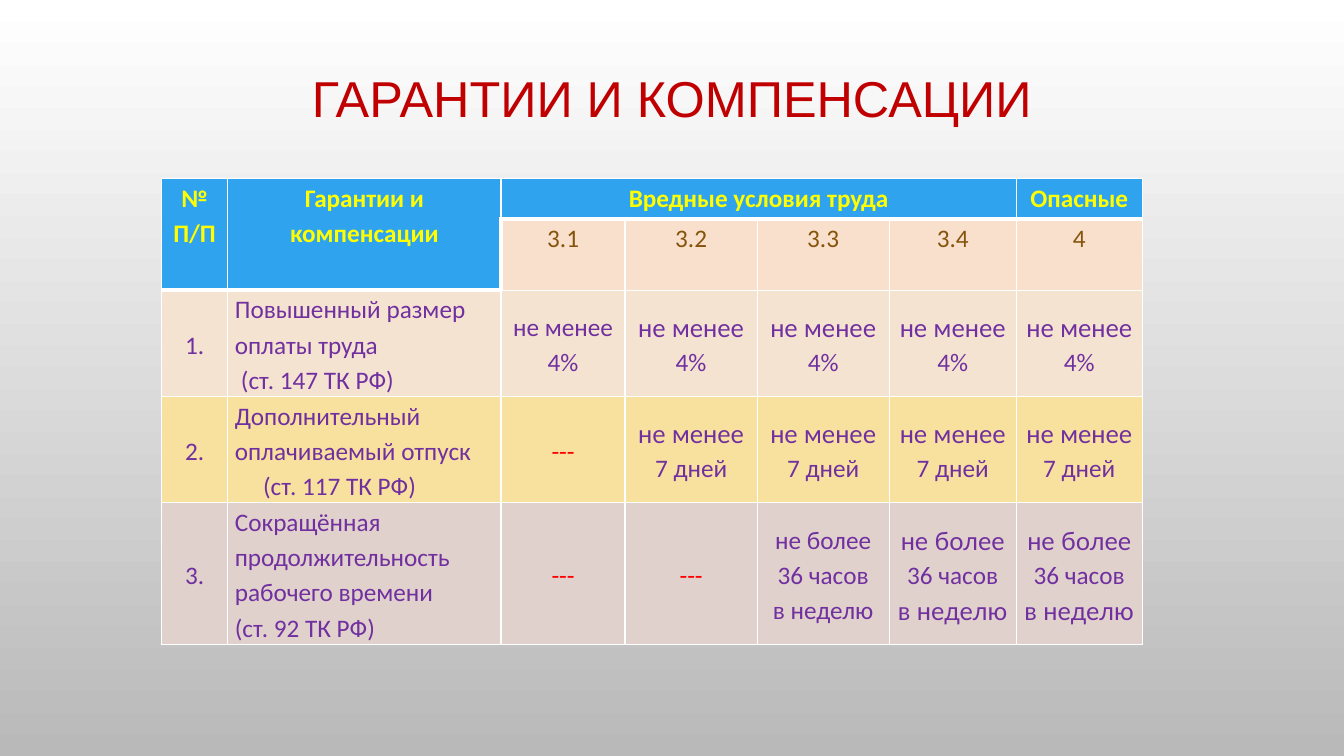
from pptx import Presentation
from pptx.dml.color import RGBColor
from pptx.enum.text import MSO_ANCHOR, MSO_AUTO_SIZE, PP_ALIGN
from pptx.oxml import parse_xml
from pptx.oxml.ns import nsdecls
from pptx.util import Inches, Pt

BODY, ACCENT, TITLE = "Calibri", "Lato", "Arial"
PURPLE, RED, YELLOW, BROWN, WHITE = "7030A0", "FF0000", "FFFF00", "85540A", "FFFFFF"
HEADER_FILL, CLASS_FILL = "2FA3EE", "F9E0CD"
ROW_FILLS = ["F5E3D1", "F8E19F", "E1D1CC"]
COLUMN_WIDTHS = [0.66, 2.71, 1.23, 1.31, 1.31, 1.26, 1.25]
ROW_HEIGHTS = [0.4, 0.71, 1.05, 1.05, 1.41]
DASH = "---"


def color(value):
    return RGBColor.from_string(value)


def accented(phrase, value):
    """Paragraph with the phrase in the accent font and the value in the body font."""
    return [(phrase + " ", ACCENT), (value, BODY)]


class GuaranteesSlide:
    def __init__(self, presentation):
        self.slide = presentation.slides.add_slide(presentation.slide_layouts[5])
        self.format = {"size": Pt(18), "name": BODY, "bold": False}

    def background(self, top, bottom):
        fill = self.slide.background.fill
        fill.gradient()
        fill.gradient_angle = 270
        for stop, value in zip(fill.gradient_stops, (top, bottom)):
            stop.color.rgb = color(value)

    def run(self, paragraph, text, text_color, **changes):
        run = paragraph.add_run()
        run.text = text
        for name, value in {**self.format, **changes}.items():
            setattr(run.font, name, value)
        run.font.color.rgb = color(text_color)

    def title(self, text, left, top, width, height):
        shape = self.slide.shapes.title
        shape.left, shape.top = Inches(left), Inches(top)
        shape.width, shape.height = Inches(width), Inches(height)
        frame = shape.text_frame
        frame.auto_size = MSO_AUTO_SIZE.NONE
        frame.vertical_anchor = MSO_ANCHOR.MIDDLE
        paragraph = frame.paragraphs[0]
        paragraph.alignment = PP_ALIGN.CENTER
        paragraph.line_spacing = 0.9
        self.run(paragraph, text, "C00000", size=Pt(36), name=TITLE)

    def table(self, left, top, widths, heights):
        frame = self.slide.shapes.add_table(
            len(heights), len(widths), Inches(left), Inches(top),
            Inches(sum(widths)), Inches(sum(heights)))
        table = frame.table
        table.first_row = table.horz_banding = False
        for column, width in zip(table.columns, widths):
            column.width = Inches(width)
        for row, height in zip(table.rows, heights):
            row.height = Inches(height)
        return table

    def borders(self, cell, thick_sides):
        properties = cell._tc.get_or_add_tcPr()
        for side in "LRTB":
            width = Pt(3 if side in thick_sides else 1)
            properties.append(parse_xml(
                f'<a:ln{side} {nsdecls("a")} w="{width}"><a:solidFill>'
                f'<a:srgbClr val="{WHITE}"/></a:solidFill></a:ln{side}>'))

    def cell(self, cell, fill, thick_sides):
        self.borders(cell, thick_sides)
        cell.fill.solid()
        cell.fill.fore_color.rgb = color(fill)
        margins = {"margin_left": 0.07, "margin_right": 0.07, "margin_top": 0, "margin_bottom": 0}
        for name, value in margins.items():
            setattr(cell, name, Inches(value))

    def text(self, cell, paragraphs, text_color, centered=True, middle=True, indent=0, **changes):
        """Each paragraph is a string or a list of (text, font) pairs; indent is for the last one."""
        cell.vertical_anchor = MSO_ANCHOR.MIDDLE if middle else MSO_ANCHOR.TOP
        frame = cell.text_frame
        for index, content in enumerate(paragraphs):
            paragraph = frame.add_paragraph() if index else frame.paragraphs[0]
            paragraph.alignment = PP_ALIGN.CENTER if centered else PP_ALIGN.LEFT
            paragraph.line_spacing = 1.15
            parts = [(content, BODY)] if isinstance(content, str) else content
            for text, font in parts:
                self.run(paragraph, text, text_color, name=font, **changes)
        if indent:
            paragraph._p.get_or_add_pPr().set("marL", str(Inches(indent)))


def thick_sides(row, column):
    """Heavy rules run under the header and beside the first class."""
    if row == 0:
        return "B"
    if row == 1:
        return "B" if column < 2 else "LT" if column == 2 else "T"
    return "T" if row == 2 and column < 2 else ""


def main():
    presentation = Presentation()
    presentation.slide_width, presentation.slide_height = Inches(13.33), Inches(7.5)
    page = GuaranteesSlide(presentation)
    page.background(WHITE, "B9B9B9")
    page.title("ГАРАНТИИ И КОМПЕНСАЦИИ", 0, 0.68, 13.33, 0.65)

    # Table grid
    table = page.table(1.6, 1.77, COLUMN_WIDTHS, ROW_HEIGHTS)
    for row in range(len(ROW_HEIGHTS)):
        for column in range(len(COLUMN_WIDTHS)):
            is_header = row == 0 or (row == 1 and column < 2)
            fill = HEADER_FILL if is_header else CLASS_FILL if row == 1 else ROW_FILLS[row - 2]
            page.cell(table.cell(row, column), fill, thick_sides(row, column))
    for first, last in [((0, 0), (1, 0)), ((0, 1), (1, 1)), ((0, 2), (0, 5))]:
        table.cell(*first).merge(table.cell(*last))

    # Header
    headers = {0: ["№", "П/П"], 1: ["Гарантии и компенсации"],
               2: ["Вредные условия труда"], 6: ["Опасные"]}
    for column, paragraphs in headers.items():
        page.text(table.cell(0, column), paragraphs, YELLOW, middle=False, bold=True)
    for column, label in enumerate(["3.1", "3.2", "3.3", "3.4", "4"], start=2):
        page.text(table.cell(1, column), [label], BROWN, middle=False)

    # Guarantees: name, article, article indent, values by class
    percent = [accented("не менее", "4%")]
    leave = [accented("не менее", "7 дней")]
    week = [accented("не более", "36 часов"), [("в неделю", ACCENT)]]
    guarantees = [
        ("Повышенный размер оплаты труда", "(ст. 147 ТК РФ)", 0.06,
         [["не менее 4%"]] + [percent] * 4),
        ("Дополнительный оплачиваемый отпуск", "(ст. 117 ТК РФ)", 0.28,
         [[DASH]] + [leave] * 4),
        ("Сокращённая продолжительность рабочего времени", "(ст. 92 ТК РФ)", 0,
         [[DASH]] * 2 + [["не более 36 часов", "в неделю"]] + [week] * 2),
    ]
    for number, (name, article, indent, values) in enumerate(guarantees, start=1):
        row = number + 1
        page.text(table.cell(row, 0), [f"{number}."], PURPLE)
        page.text(table.cell(row, 1), [name, article], PURPLE,
                  centered=False, middle=False, indent=indent)
        for column, value in enumerate(values, start=2):
            page.text(table.cell(row, column), value, RED if value == [DASH] else PURPLE)

    presentation.save("out.pptx")


if __name__ == "__main__":
    main()
